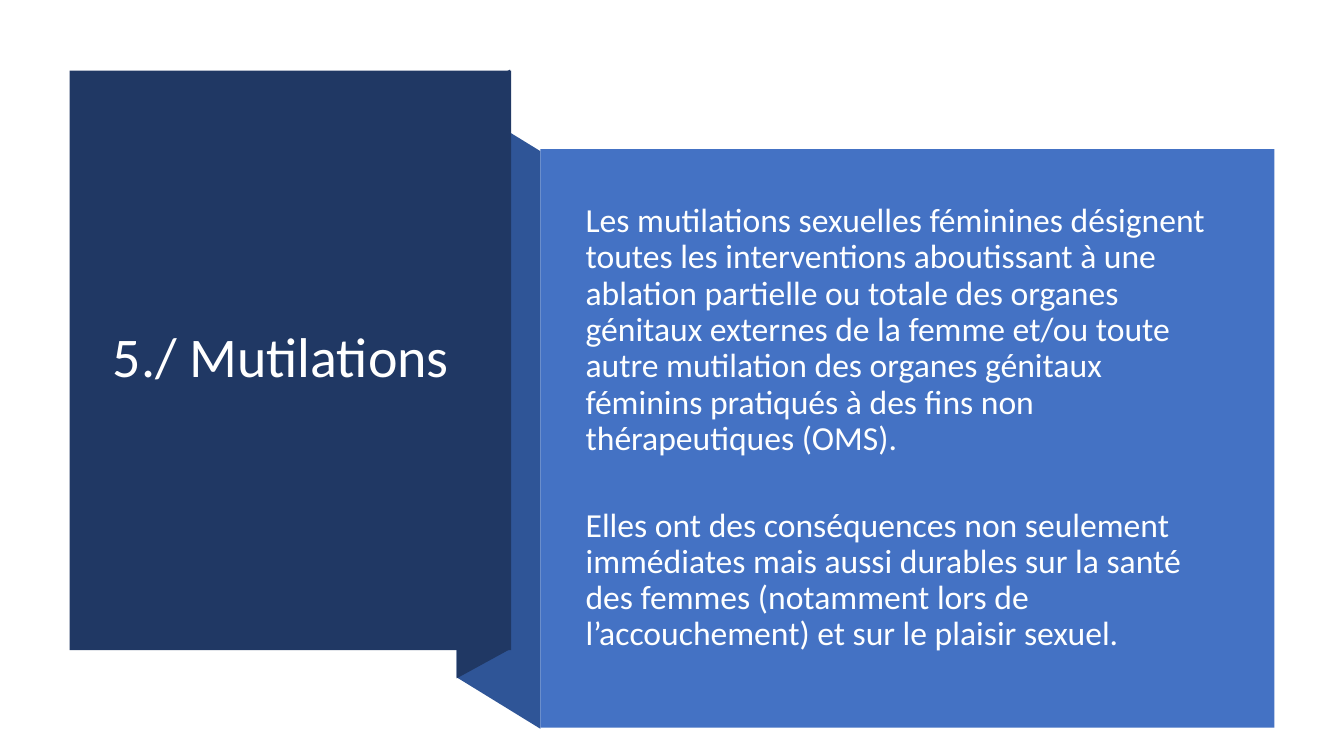
"""Build the slide on mutilations: a dark title panel folded onto a blue text panel."""
from pptx import Presentation
from pptx.dml.color import RGBColor as RGB
from pptx.enum.shapes import MSO_SHAPE as SHAPE
from pptx.enum.text import MSO_ANCHOR as ANCHOR
from pptx.util import Inches, Pt

NAVY = RGB(0x20, 0x38, 0x64)
MID = RGB(0x2F, 0x55, 0x97)
BLUE = RGB(0x44, 0x72, 0xC4)
WHITE = RGB(0xFF, 0xFF, 0xFF)
PALE = RGB(0xFE, 0xFF, 0xFF)


def paint(shape, color):
    shape.shadow.inherit = False
    shape.fill.solid()
    shape.fill.fore_color.rgb = color
    shape.line.fill.background()


def write(texts, box, size, color, gaps):
    frame = slide.shapes.add_textbox(*map(Inches, box)).text_frame
    frame.word_wrap = True
    frame.vertical_anchor = ANCHOR.MIDDLE
    for i, (text, gap) in enumerate(zip(texts, gaps)):
        para = frame.add_paragraph() if i else frame.paragraphs[0]
        para.line_spacing = 0.9
        para.space_before = Pt(gap)
        run = para.add_run()
        run.text = text
        run.font.name = "Calibri"
        run.font.size = Pt(size)
        run.font.color.rgb = color


deck = Presentation()
deck.slide_width = Inches(13.33)
deck.slide_height = Inches(7.5)
slide = deck.slides.add_slide(deck.slide_layouts[6])

folds = [
    (MID, [(5.36, 7.23), (4.53, 6.72), (4.53, 0.99), (5.36, 1.5)]),
    (NAVY, [(5.06, 6.44), (4.53, 6.73), (4.53, 0.98), (5.06, 0.69)]),
]
for color, points in folds:
    first, *rest = [(Inches(x), Inches(y)) for x, y in points]
    pen = slide.shapes.build_freeform(*first)
    pen.add_line_segments(rest, close=True)
    paint(pen.convert_to_shape(), color)

panels = [
    (NAVY, (0.69, 0.7, 4.38, 5.75)),
    (BLUE, (5.36, 1.48, 7.28, 5.74)),
]
for color, box in panels:
    paint(slide.shapes.add_shape(SHAPE.RECTANGLE, *map(Inches, box)), color)

title = ["5./ Mutilations"]
body = [
    "Les mutilations sexuelles féminines désignent toutes les interventions "
    "aboutissant à une ablation partielle ou totale des organes génitaux "
    "externes de la femme et/ou toute autre mutilation des organes génitaux "
    "féminins pratiqués à des fins non thérapeutiques (OMS).",
    "Elles ont des conséquences non seulement immédiates mais aussi durables "
    "sur la santé des femmes (notamment lors de l’accouchement) et sur le "
    "plaisir sexuel.",
]
write(title, box=(1.02, 1.07, 3.71, 4.99), size=40, color=WHITE, gaps=[0])
write(body, box=(5.71, 1.88, 6.51, 4.74), size=24, color=PALE, gaps=[10, 36])

deck.save("out.pptx")
